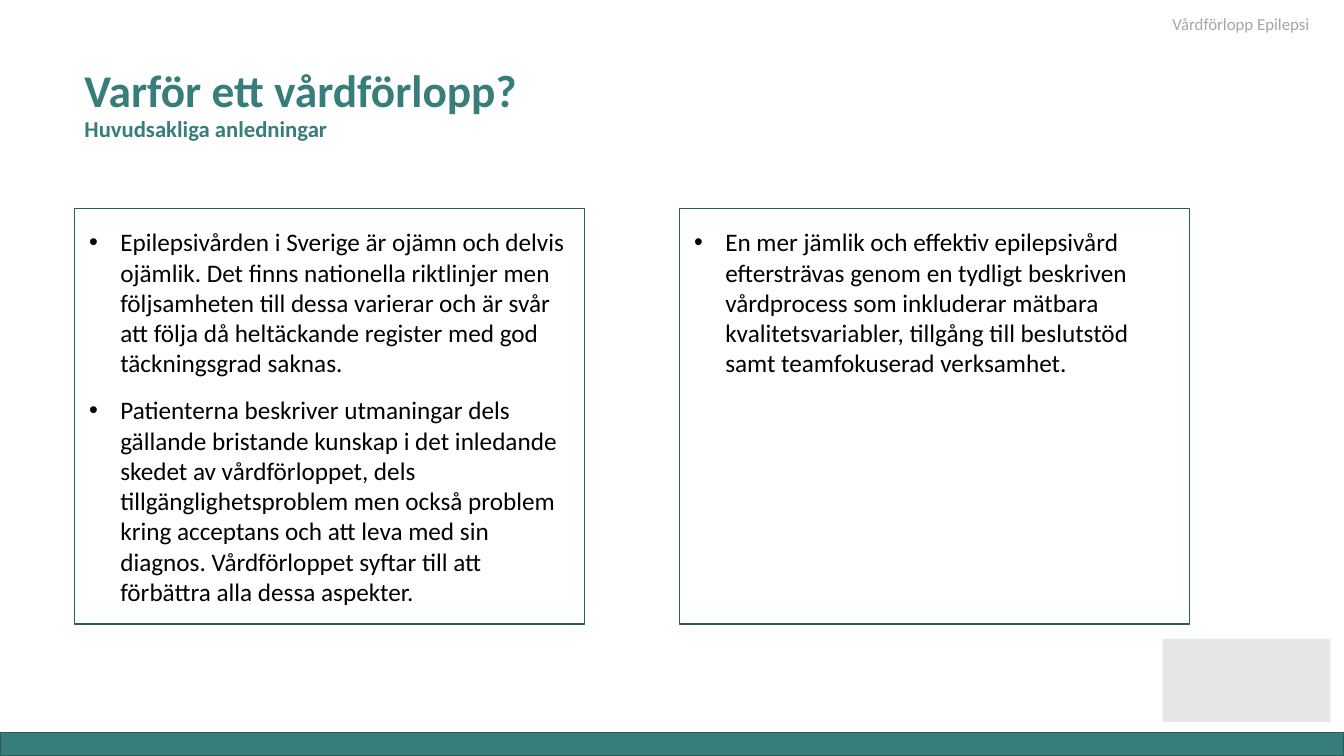
from dataclasses import dataclass

from lxml.etree import SubElement
from pptx import Presentation
from pptx.dml.color import RGBColor
from pptx.enum.shapes import MSO_SHAPE as Preset
from pptx.enum.text import MSO_ANCHOR as Anchor
from pptx.oxml.ns import qn
from pptx.util import Inches, Pt

WIDTH, HEIGHT = Inches(13.33), Inches(7.5)
TEAL, DARK_TEAL, BLACK = "377D7A", "295C5A", "000000"
GREY, LIGHT_GREY = "A6A6A6", "E7E6E6"


# Lengths are percentages of the slide's width and height
@dataclass
class Area:
    left: float
    top: float
    width: float
    height: float

    def lengths(self) -> tuple:
        return across(self.left), down(self.top), across(self.width), down(self.height)


@dataclass
class Panel:
    left: float
    points: list[str]


PANELS = [
    Panel(5.55, [
        "Epilepsivården i Sverige är ojämn och delvis ojämlik. Det finns nationella "
        "riktlinjer men följsamheten till dessa varierar och är svår att följa då "
        "heltäckande register med god täckningsgrad saknas.",
        "Patienterna beskriver utmaningar dels gällande bristande kunskap i det inledande "
        "skedet av vårdförloppet, dels tillgänglighetsproblem men också problem kring "
        "acceptans och att leva med sin diagnos. Vårdförloppet syftar till att förbättra "
        "alla dessa aspekter.",
    ]),
    Panel(50.56, [
        "En mer jämlik och effektiv epilepsivård eftersträvas genom en tydligt beskriven "
        "vårdprocess som inkluderar mätbara kvalitetsvariabler, tillgång till beslutstöd "
        "samt teamfokuserad verksamhet.",
    ]),
]


def across(share: float) -> int:
    return round(WIDTH * share / 100)


def down(share: float) -> int:
    return round(HEIGHT * share / 100)


def rgb(color: str) -> RGBColor:
    return RGBColor.from_string(color)


def set_font(font, size: float, color: str, bold: bool = False) -> None:
    font.name, font.size, font.bold = "Calibri", Pt(size), bold
    font.color.rgb = rgb(color)


def add_frame(page, area: Area):
    frame = page.shapes.add_textbox(*area.lengths()).text_frame
    frame.word_wrap = True
    return frame


def add_rectangle(page, area: Area, fill: str | None = None,
                  line: str | None = DARK_TEAL) -> None:
    box = page.shapes.add_shape(Preset.RECTANGLE, *area.lengths())
    box.shadow.inherit = False
    if fill:
        box.fill.solid()
        box.fill.fore_color.rgb = rgb(fill)
    else:
        box.fill.background()
    if line:
        box.line.color.rgb = rgb(line)
        box.line.width = Pt(1)
    else:
        box.line.fill.background()


def add_topic(page, topic: str) -> None:
    para = add_frame(page, Area(86.5, 1.2, 12.75, 4)).paragraphs[0]
    para.text = topic
    set_font(para.font, 12, GREY)


def add_title(page, title: str, subtitle: str) -> None:
    frame = add_frame(page, Area(5.55, 10.53, 75, 8.93))
    frame.vertical_anchor = Anchor.BOTTOM
    para = frame.paragraphs[0]
    para.line_spacing = 0.9
    for text, size in ((title, 32.4), (subtitle, 16.2)):
        if para.runs:
            para.add_line_break()
        span = para.add_run()
        span.text = text
        set_font(span.font, size, TEAL, True)


def add_bullet(para) -> None:
    properties = para._p.get_or_add_pPr()
    indent = Inches(0.31)
    properties.set("marL", str(indent))
    properties.set("indent", str(-indent))
    SubElement(properties, qn("a:buFont"), typeface="Arial")
    SubElement(properties, qn("a:buChar"), char="•")


def add_panel(page, panel: Panel) -> None:
    add_rectangle(page, Area(panel.left, 27.6, 37.96, 54.93))
    frame = add_frame(page, Area(panel.left + 0.34, 29.33, 37.4, 52))
    frame.text = "\n".join(panel.points)
    for number, para in enumerate(frame.paragraphs):
        add_bullet(para)
        para.space_before = Pt(6 if number else 0)
        para.space_after = Pt(6)
        set_font(para.font, 18, BLACK)


def main() -> None:
    deck = Presentation()
    deck.slide_width, deck.slide_height = WIDTH, HEIGHT
    page = deck.slides.add_slide(deck.slide_layouts[6])

    # Footer band and the plain sender block above it
    add_rectangle(page, Area(0, 96.93, 100, 3.07), TEAL)
    add_rectangle(page, Area(86.5, 84.5, 12.5, 11), LIGHT_GREY, line=None)

    # Topic and heading
    add_topic(page, "Vårdförlopp Epilepsi")
    add_title(page, "Varför ett vårdförlopp?", "Huvudsakliga anledningar")

    # The two reason panels
    for panel in PANELS:
        add_panel(page, panel)

    deck.save("out.pptx")


if __name__ == "__main__":
    main()
